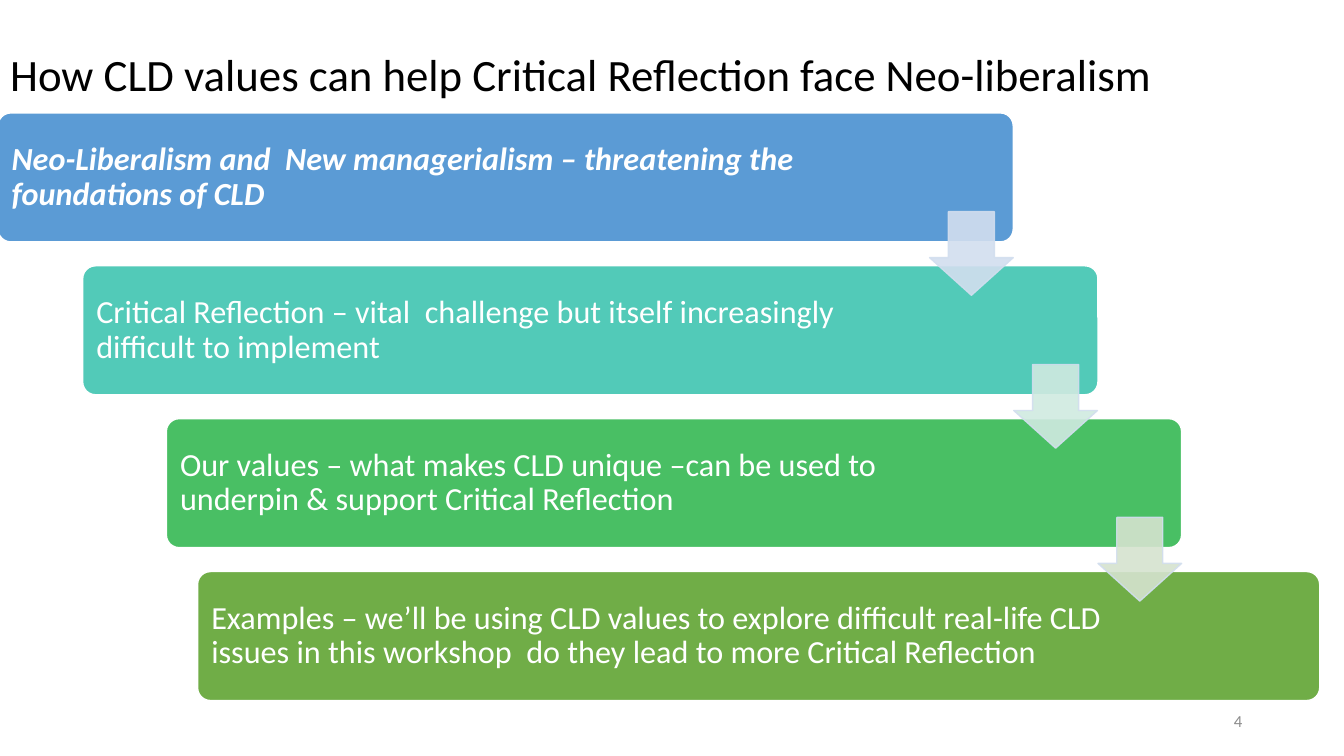
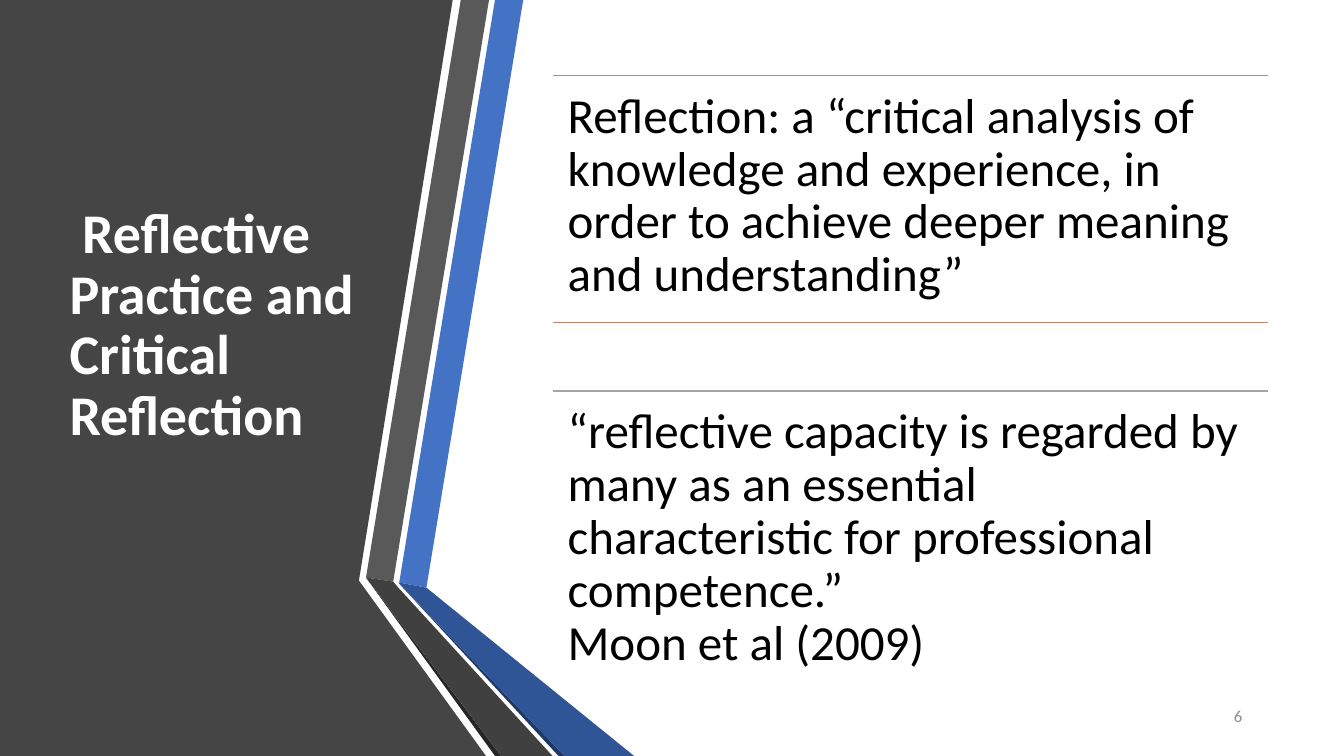
"""Build two slides on critical reflection: a cascade of steps and a pair of quotations."""
from typing import NamedTuple

from lxml.etree import SubElement
from pptx import Presentation
from pptx.dml.color import RGBColor
from pptx.enum.shapes import MSO_CONNECTOR, MSO_SHAPE
from pptx.enum.text import MSO_ANCHOR, MSO_AUTO_SIZE, PP_ALIGN
from pptx.oxml.ns import qn
from pptx.util import Inches, Pt

FONT = "Calibri"
COLOURS = {
    "white": "FFFFFF", "black": "000000", "page number": "8C8C8C",
    "blue": "5B9BD5", "teal": "52CAB8", "green": "49BF64", "olive": "70AD47",
    "pale blue": "D2DEEF", "pale teal": "D0EAE1", "pale green": "D5E3CF",
    "panel": "454545", "grey band": "595959", "grey fold": "404040", "grey edge": "262626",
    "blue band": "4472C4", "blue fold": "2F5597", "blue edge": "203864",
    "orange rule": "ED7D31", "red rule": "C48170", "grey rule": "A5A5A5",
}


class Box(NamedTuple):
    left: float
    top: float
    width: float
    height: float


class TextStyle(NamedTuple):
    size: float
    colour: str
    bold: bool = False
    italic: bool = False
    align: PP_ALIGN = PP_ALIGN.LEFT
    anchor: MSO_ANCHOR = MSO_ANCHOR.MIDDLE
    spacing: float = 0.9


class Step(NamedTuple):
    text: str
    colour: str
    left: float
    width: float = 10.07
    emphasis: bool = False


class Facet(NamedTuple):
    colour: str
    points: list[tuple[float, float]]


class Quotation(NamedTuple):
    text: str
    top: float
    rules: dict[float, str]


NUMBER_STYLE = TextStyle(12, "page number", align=PP_ALIGN.RIGHT, spacing=1.0)
QUOTATION_STYLE = TextStyle(35, "black", anchor=MSO_ANCHOR.TOP)

STEP_TOP, STEP_HEIGHT, STEP_PITCH = 1.12, 1.28, 4.55 / 3
ARROW_LEFT, ARROW_TOP, ARROW_SIZE, ARROW_SHIFT = 9.22, 2.1, 0.83, 0.835
STEPS = [
    Step("Neo-Liberalism and  New managerialism – threatening the foundations of CLD",
         "blue", -0.02, emphasis=True),
    Step("Critical Reflection – vital  challenge but itself increasingly difficult to implement",
         "teal", 0.82),
    Step("Our values – what makes CLD unique –can be used to underpin & support Critical Reflection",
         "green", 1.65),
    Step("Examples – we’ll be using CLD values to explore difficult real-life CLD issues "
         "in this workshop  do they lead to more Critical Reflection", "olive", 1.96, 11.13),
]
ARROW_COLOURS = ["pale blue", "pale teal", "pale green"]

FACETS = [
    Facet("panel", [(0, 0), (4.49, 0), (3.56, 5.76), (4.82, 7.5), (0, 7.5)]),
    Facet("blue band", [(3.96, 5.78), (4.23, 5.83), (5.19, 0), (4.91, 0)]),
    Facet("grey band", [(4.85, 0), (4.57, 0), (3.63, 5.73), (3.9, 5.77)]),
    Facet("grey edge", [(3.63, 5.73), (4.91, 7.5), (4.97, 7.5)]),
    Facet("blue edge", [(3.96, 5.79), (5.54, 7.5), (5.6, 7.5)]),
    Facet("blue fold", [(3.96, 5.78), (3.96, 5.79), (5.6, 7.5), (6.29, 7.5), (4.23, 5.83)]),
    Facet("grey fold", [(3.63, 5.73), (4.97, 7.5), (5.48, 7.5), (3.95, 5.83), (3.9, 5.77)]),
]
QUOTATION_LEFT, QUOTATION_WIDTH, QUOTATION_HEIGHT = 5.48, 7.1, 2.45
QUOTATIONS = [
    Quotation("Reflection: a “critical analysis of knowledge and experience, in order to achieve "
              "deeper meaning and understanding”", 0.75, {0.75: "orange rule", 3.2: "red rule"}),
    Quotation("“reflective capacity is regarded by many as an essential characteristic "
              "for professional competence.”\vMoon et al (2009)", 3.88, {3.88: "grey rule"}),
]


def colour_of(name: str) -> RGBColor:
    return RGBColor.from_string(COLOURS[name])


def lengths(box: Box) -> list[Inches]:
    return [Inches(value) for value in box]


def write(shape, text: str, style: TextStyle) -> None:
    frame = shape.text_frame
    frame.text = text
    frame.word_wrap = True
    frame.auto_size = MSO_AUTO_SIZE.NONE
    frame.vertical_anchor = style.anchor
    for paragraph in frame.paragraphs:
        paragraph.alignment = style.align
        paragraph.line_spacing = style.spacing
        for run in paragraph.runs:
            run.font.name = FONT
            run.font.size = Pt(style.size)
            run.font.bold = style.bold
            run.font.italic = style.italic
            run.font.color.rgb = colour_of(style.colour)


def set_insets(shape, left: float, top: float, right: float, bottom: float) -> None:
    frame = shape.text_frame
    frame.margin_left, frame.margin_top = Inches(left), Inches(top)
    frame.margin_right, frame.margin_bottom = Inches(right), Inches(bottom)


def set_title(slide, text: str, box: Box, style: TextStyle) -> None:
    title = slide.shapes.title
    title.left, title.top, title.width, title.height = lengths(box)
    write(title, text, style)


def add_text(slide, text: str, box: Box, style: TextStyle):
    shape = slide.shapes.add_textbox(*lengths(box))
    write(shape, text, style)
    return shape


def add_page_number(slide, number: int, top: float) -> None:
    add_text(slide, str(number), Box(11.23, top, 1.19, 0.4), NUMBER_STYLE)


def add_filled_shape(slide, kind: MSO_SHAPE, box: Box, fill: str, line: str):
    shape = slide.shapes.add_shape(kind, *lengths(box))
    shape.shadow.inherit = False
    shape.fill.solid()
    shape.fill.fore_color.rgb = colour_of(fill)
    shape.line.color.rgb = colour_of(line)
    shape.line.width = Pt(1)
    return shape


def add_step(slide, step: Step, index: int) -> None:
    box = Box(step.left, STEP_TOP + index * STEP_PITCH, step.width, STEP_HEIGHT)
    shape = add_filled_shape(slide, MSO_SHAPE.ROUNDED_RECTANGLE, box, step.colour, "white")
    shape.adjustments[0] = 0.1
    write(shape, step.text, TextStyle(23, "white", step.emphasis, step.emphasis))
    set_insets(shape, 0.1, 0.1, 1.75, 0.1)


def add_step_arrow(slide, colour: str, index: int) -> None:
    box = Box(ARROW_LEFT + index * ARROW_SHIFT, ARROW_TOP + index * STEP_PITCH,
              ARROW_SIZE, ARROW_SIZE)
    shape = add_filled_shape(slide, MSO_SHAPE.DOWN_ARROW, box, colour, "pale blue")
    shape.adjustments[0], shape.adjustments[1] = 0.45, 0.55
    shape.adjustments[0], shape.adjustments[1] = 0.55, 0.45
    for colour_element in shape.element.spPr.iter(qn("a:srgbClr")):
        SubElement(colour_element, qn("a:alpha")).set("val", "90000")


def add_facet(slide, facet: Facet) -> None:
    points = [(Inches(x), Inches(y)) for x, y in facet.points]
    builder = slide.shapes.build_freeform(*points[0])
    builder.add_line_segments(points[1:], close=True)
    shape = builder.convert_to_shape()
    shape.shadow.inherit = False
    shape.fill.solid()
    shape.fill.fore_color.rgb = colour_of(facet.colour)
    shape.line.fill.background()


def add_rule(slide, top: float, colour: str) -> None:
    left, right = Inches(QUOTATION_LEFT), Inches(QUOTATION_LEFT + QUOTATION_WIDTH)
    rule = slide.shapes.add_connector(MSO_CONNECTOR.STRAIGHT, left, Inches(top), right, Inches(top))
    rule.line.color.rgb = colour_of(colour)
    rule.line.width = Pt(1)
    SubElement(rule.element.spPr, qn("a:effectLst"))


def add_quotation(slide, quotation: Quotation) -> None:
    for top, colour in quotation.rules.items():
        add_rule(slide, top, colour)
    box = Box(QUOTATION_LEFT, quotation.top, QUOTATION_WIDTH, QUOTATION_HEIGHT)
    shape = add_text(slide, quotation.text, box, QUOTATION_STYLE)
    set_insets(shape, 0.15, 0.15, 0.15, 0.15)


def build_values_slide(slide) -> None:
    set_title(slide, "How CLD values can help Critical Reflection face Neo-liberalism",
              Box(0, 0.4, 11.98, 0.72), TextStyle(32, "black"))
    for index, step in enumerate(STEPS):
        add_step(slide, step, index)
    for index, colour in enumerate(ARROW_COLOURS):
        add_step_arrow(slide, colour, index)
    add_page_number(slide, 4, 6.95)


def build_reflection_slide(slide) -> None:
    for facet in FACETS:
        add_facet(slide, facet)
    set_title(slide, " Reflective Practice and Critical Reflection",
              Box(0.59, 0.75, 3.04, 4.98), TextStyle(40, "white", bold=True))
    slide.shapes.element.append(slide.shapes.title.element)
    for quotation in QUOTATIONS:
        add_quotation(slide, quotation)
    add_page_number(slide, 6, 6.9)


def main() -> None:
    presentation = Presentation()
    presentation.slide_width, presentation.slide_height = Inches(13.33), Inches(7.5)
    for build_slide in (build_values_slide, build_reflection_slide):
        build_slide(presentation.slides.add_slide(presentation.slide_layouts[5]))
    presentation.save("out.pptx")


if __name__ == "__main__":
    main()
